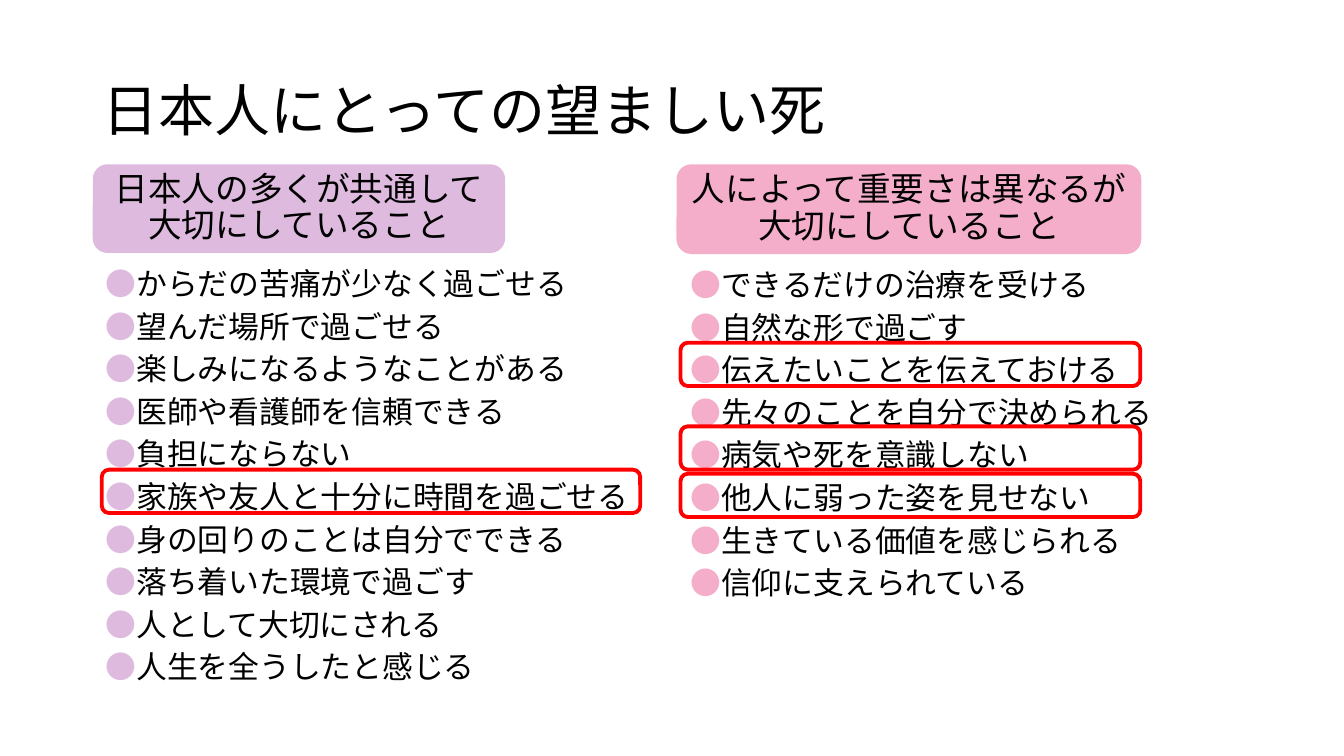
import dataclasses

import lxml.etree
import pptx
import pptx.dml.color
import pptx.enum.shapes
import pptx.enum.text
import pptx.oxml.ns
import pptx.util

Inches = pptx.util.Inches
Align = pptx.enum.text.PP_ALIGN
Anchor = pptx.enum.text.MSO_ANCHOR


def rgb(value):
    return pptx.dml.color.RGBColor.from_string(value)


@dataclasses.dataclass(frozen=True)
class Theme:
    font: str = "Noto Sans CJK JP"
    ink: str = "000000"
    shared: str = "DDBADE"
    personal: str = "F4AECA"
    highlight: str = "FF0000"
    title_size: int = 40
    heading_size: int = 24
    item_size: int = 22
    highlight_width: float = 2.75


def write_run(paragraph, text, *, size, color, font):
    run = paragraph.add_run()
    run.text = text
    run.font.size = pptx.util.Pt(size)
    run.font.color.rgb = rgb(color)
    run.font.name = font
    east_asian = lxml.etree.SubElement(run.font._element, pptx.oxml.ns.qn("a:ea"))
    east_asian.set("typeface", font)


class SlideBuilder:
    """Draws styled elements on one slide."""

    def __init__(self, slide, theme):
        self.slide = slide
        self.theme = theme

    def write_lines(self, frame, lines, size, align, line_spacing=None, space_before=0):
        for index, parts in enumerate(lines):
            paragraph = frame.add_paragraph() if index else frame.paragraphs[0]
            paragraph.alignment = align
            paragraph.space_before = pptx.util.Pt(space_before)
            if line_spacing:
                paragraph.line_spacing = line_spacing
            for text, color in parts:
                write_run(paragraph, text, size=size, color=color, font=self.theme.font)

    def text_box(self, box):
        frame = self.slide.shapes.add_textbox(*map(Inches, box)).text_frame
        frame.word_wrap = True
        return frame

    def rounded_box(self, box):
        shape = self.slide.shapes.add_shape(
            pptx.enum.shapes.MSO_SHAPE.ROUNDED_RECTANGLE, *map(Inches, box))
        shape.shadow.inherit = False
        return shape

    def title(self, text, box):
        frame = self.text_box(box)
        frame.vertical_anchor = Anchor.MIDDLE
        self.write_lines(frame, [[(text, self.theme.ink)]], self.theme.title_size,
                         Align.LEFT, line_spacing=0.9)

    def heading(self, lines, box, color):
        panel = self.rounded_box(box)
        panel.fill.solid()
        panel.fill.fore_color.rgb = rgb(color)
        panel.line.fill.background()
        frame = panel.text_frame
        frame.word_wrap = False
        frame.vertical_anchor = Anchor.MIDDLE
        self.write_lines(frame, [[(line, self.theme.ink)] for line in lines],
                         self.theme.heading_size, Align.CENTER, line_spacing=0.9)

    def items(self, wishes, box, color):
        lines = [[("●", color), (wish, self.theme.ink)] for wish in wishes]
        self.write_lines(self.text_box(box), lines, self.theme.item_size,
                         Align.JUSTIFY, space_before=4)

    def highlight(self, box):
        outline = self.rounded_box(box)
        outline.fill.background()
        outline.line.color.rgb = rgb(self.theme.highlight)
        outline.line.width = pptx.util.Pt(self.theme.highlight_width)


def main():
    presentation = pptx.Presentation()
    presentation.slide_width = Inches(13.33)
    presentation.slide_height = Inches(7.5)
    theme = Theme()
    builder = SlideBuilder(
        presentation.slides.add_slide(presentation.slide_layouts[6]), theme)

    builder.title("日本人にとっての望ましい死", (0.92, 0.4, 11.5, 1.45))

    builder.heading(["日本人の多くが共通して", "大切にしていること"],
                    (0.92, 1.63, 4.09, 0.88), theme.shared)
    builder.items([
        "からだの苦痛が少なく過ごせる",
        "望んだ場所で過ごせる",
        "楽しみになるようなことがある",
        "医師や看護師を信頼できる",
        "負担にならない",
        "家族や友人と十分に時間を過ごせる",
        "身の回りのことは自分でできる",
        "落ち着いた環境で過ごす",
        "人として大切にされる",
        "人生を全うしたと感じる",
    ], (0.95, 2.58, 5.57, 4.31), theme.shared)

    builder.heading(["人によって重要さは異なるが", "大切にしていること"],
                    (6.71, 1.63, 4.61, 0.89), theme.personal)
    builder.items([
        "できるだけの治療を受ける",
        "自然な形で過ごす",
        "伝えたいことを伝えておける",
        "先々のことを自分で決められる",
        "病気や死を意識しない",
        "他人に弱った姿を見せない",
        "生きている価値を感じられる",
        "信仰に支えられている",
    ], (6.75, 2.59, 4.81, 3.46), theme.personal)

    builder.highlight((1.01, 4.66, 5.34, 0.43))
    for top in (3.4, 4.23, 4.7):
        builder.highlight((6.75, top, 4.56, 0.43))

    presentation.save("out.pptx")


if __name__ == "__main__":
    main()
